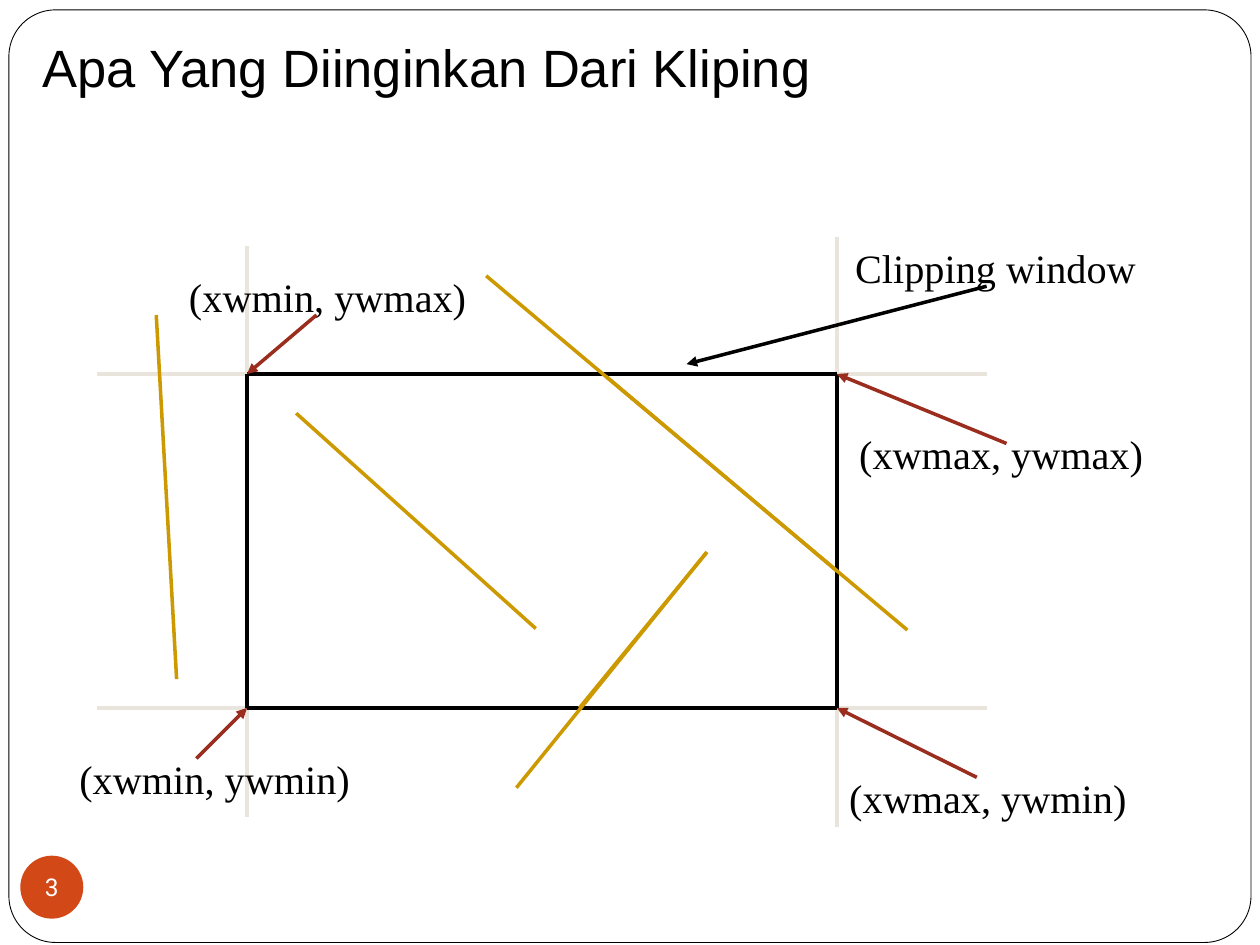
from dataclasses import dataclass

from lxml import etree
from pptx import Presentation
from pptx.dml.color import RGBColor
from pptx.enum import shapes, text
from pptx.oxml import ns
from pptx.util import Cm, Pt


@dataclass(frozen=True)
class Theme:
    paper: str = "FFFFFF"
    ink: str = "000000"
    guide: str = "E9E5DC"
    segment: str = "CC9900"
    pointer: str = "9B2D1F"
    badge: str = "D34817"
    title_font: str = "Arial"
    label_font: str = "Times New Roman"
    badge_font: str = "Roboto"
    title_size: int = 30
    label_size: int = 23
    badge_size: int = 14
    line_width: float = 2
    frame_width: float = 0.5


THEME = Theme()


def set_font(p, name, size, color):
    p.font.name = name
    p.font.size = Pt(size)
    p.font.color.rgb = RGBColor.from_string(color)


def add_preset(s, kind, box, fill):
    sp = s.shapes.add_shape(kind, *map(Cm, box))
    sp.shadow.inherit = False
    sp.fill.solid()
    sp.fill.fore_color.rgb = RGBColor.from_string(fill)
    return sp


def add_line(parent, origin, start, end, color, arrow=False):
    x, y = origin
    line = parent.shapes.add_connector(
        shapes.MSO_CONNECTOR.STRAIGHT,
        Cm(x + start[0]), Cm(y + start[1]), Cm(x + end[0]), Cm(y + end[1]),
    )
    line.line.color.rgb = RGBColor.from_string(color)
    line.line.width = Pt(THEME.line_width)
    if arrow:
        ln = line.line._get_or_add_ln()
        etree.SubElement(ln, ns.qn("a:tailEnd"), type="triangle")
    etree.SubElement(line.element.spPr, ns.qn("a:effectLst"))


def add_label(s, box, words):
    tb = s.shapes.add_textbox(*map(Cm, box))
    tf = tb.text_frame
    tf.word_wrap = False
    tf.auto_size = text.MSO_AUTO_SIZE.SHAPE_TO_FIT_TEXT
    p = tf.paragraphs[0]
    p.text = words
    set_font(p, THEME.label_font, THEME.label_size, THEME.ink)


def add_frame(s, box):
    sp = add_preset(s, shapes.MSO_SHAPE.ROUNDED_RECTANGLE, box, THEME.paper)
    sp.adjustments[0] = 0.05
    sp.line.color.rgb = RGBColor.from_string(THEME.ink)
    sp.line.width = Pt(THEME.frame_width)
    s.shapes.title.element.addprevious(sp.element)


def add_title(s, box, words):
    title = s.shapes.title
    title.left, title.top, title.width, title.height = map(Cm, box)
    tf = title.text_frame
    tf.word_wrap = True
    tf.auto_size = text.MSO_AUTO_SIZE.NONE
    tf.vertical_anchor = text.MSO_ANCHOR.MIDDLE
    p = tf.paragraphs[0]
    p.text = words
    p.alignment = text.PP_ALIGN.LEFT
    set_font(p, THEME.title_font, THEME.title_size, THEME.ink)


def add_page_badge(s, box, number):
    sp = add_preset(s, shapes.MSO_SHAPE.OVAL, box, THEME.badge)
    sp.line.fill.background()
    tf = sp.text_frame
    tf.margin_left = tf.margin_right = tf.margin_top = tf.margin_bottom = 0
    tf.word_wrap = False
    tf.vertical_anchor = text.MSO_ANCHOR.MIDDLE
    p = tf.paragraphs[0]
    p.text = number
    p.alignment = text.PP_ALIGN.CENTER
    set_font(p, THEME.badge_font, THEME.badge_size, THEME.paper)


def add_clipping_diagram(s, box):
    x, y, width, height = box
    origin = x, y
    left, right, top, bottom = 3.02, 14.91, 2.76, 9.49

    guides = [
        ((left, 0.18), (left, 11.68)),
        ((right, 0), (right, height)),
        ((0, top), (width, top)),
        ((0, bottom), (width, bottom)),
    ]
    corners = [(left, top), (right, top), (right, bottom), (left, bottom)]
    edges = zip(corners, corners[1:] + corners[:1])
    grp = s.shapes.add_group_shape()
    for lines, color in ((guides, THEME.guide), (edges, THEME.ink)):
        for start, end in lines:
            add_line(grp, origin, start, end, color)

    segments = [
        ((4.01, 3.55), (8.84, 7.89)),
        ((1.19, 1.57), (1.6, 8.91)),
        ((8.45, 11.1), (12.29, 6.35)),
        ((9.72, bottom), (12.29, 6.35)),
        ((7.84, 0.78), (16.33, 7.92)),
        ((10.26, 2.81), (right, 6.73)),
    ]
    for start, end in segments:
        add_line(s, origin, start, end, THEME.segment)

    callouts = [
        ("Clipping window", (15.03, 0), 6.2, (width, 0.99), (11.88, 2.56), THEME.ink),
        ("(xwmin, ywmin)", (-0.61, 10.31), 5.99, (2, 10.51), (left, bottom), THEME.pointer),
        ("(xwmin, ywmax)", (1.6, 0.58), 6.12, (4.42, 1.57), (left, top), THEME.pointer),
        ("(xwmax, ywmin)", (right, 10.69), 6.12, (17.73, 10.89), (right, bottom), THEME.pointer),
        ("(xwmax, ywmax)", (15.11, 3.75), 6.27, (18.33, 4.16), (right, top), THEME.pointer),
    ]
    for words, (dx, dy), label_width, start, end, color in callouts:
        add_label(s, (x + dx, y + dy, label_width, 1.22), words)
        add_line(s, origin, start, end, color, arrow=True)


def main():
    prs = Presentation()
    prs.slide_width, prs.slide_height = Cm(25.4), Cm(19.05)
    s = prs.slides.add_slide(prs.slide_layouts.get_by_name("Title Only"))
    add_frame(s, (0.18, 0.2, 25.04, 18.8))
    add_title(s, (0.6, 0.58, 20.95, 1.53), "Apa Yang Diinginkan Dari Kliping")
    add_page_badge(s, (0.41, 17.25, 1.27, 1.27), "3")
    add_clipping_diagram(s, (1.96, 4.78, 17.93, 11.89))
    prs.save("out.pptx")


if __name__ == "__main__":
    main()
